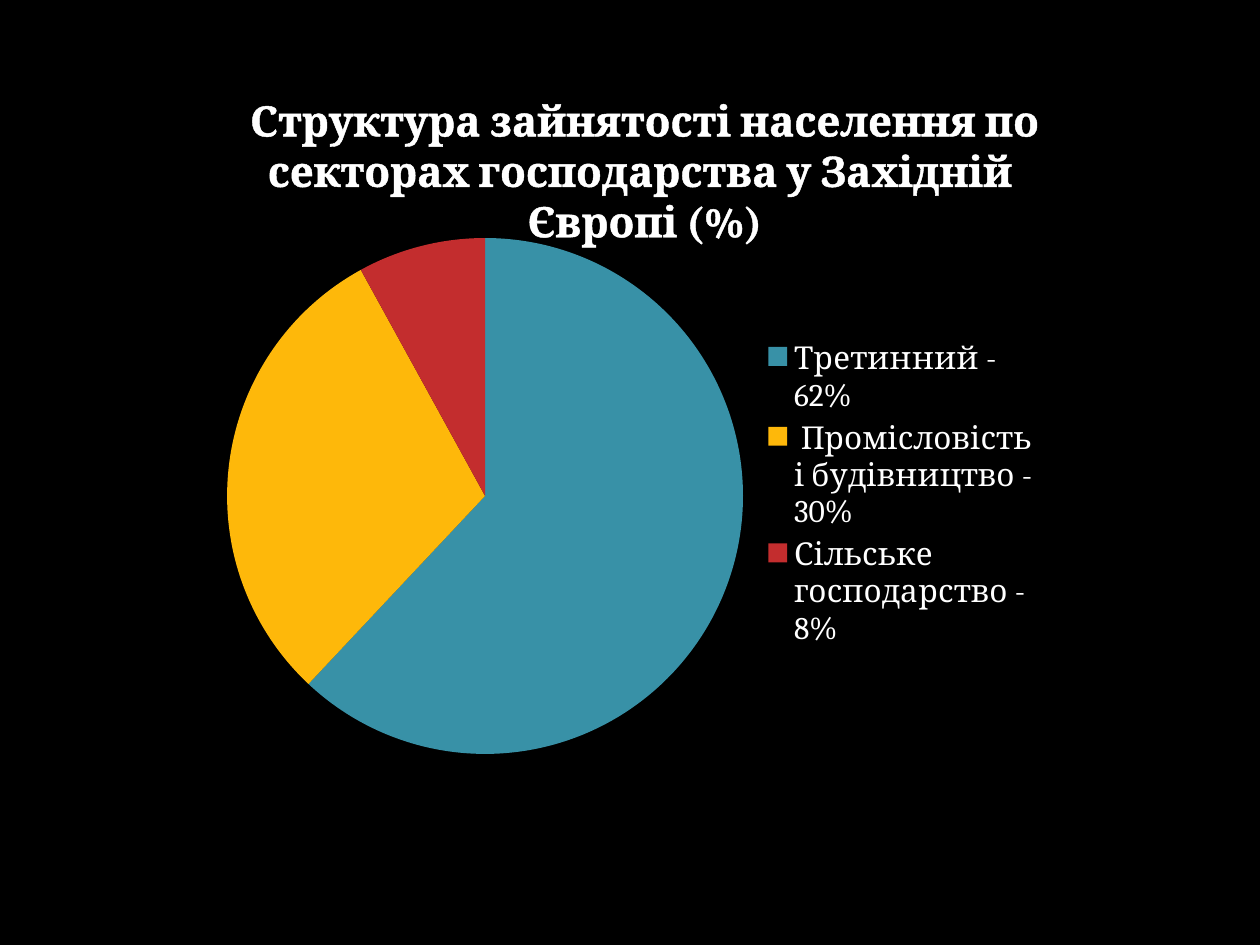
from dataclasses import dataclass

from lxml import etree
from pptx import Presentation
from pptx.chart import data as chart_data
from pptx.dml.color import RGBColor
from pptx.enum import chart as chart_enum
from pptx.enum import text
from pptx.oxml import ns, parse_xml
from pptx.util import Cm, Pt

TITLE = "Структура зайнятості населення по секторах господарства у Західній  Європі (%)"
SECTORS = [
    ("Третинний - 62%", 62, "3891A7"),
    (" Промісловість і будівництво - 30%", 30, "FEB80A"),
    ("Сільське господарство - 8%", 8, "C32D2E"),
]
TITLE_BOX = (Cm(3.76), Cm(1.78), Cm(18.47), Cm(2.31))
CHART_BOX = (Cm(4.29), Cm(4.32), Cm(16.94), Cm(11.28))
PLOT_LAYOUT = {"x": 0.017, "y": 0.038, "w": 0.614, "h": 0.931}


@dataclass(frozen=True)
class Theme:
    font: str = "Cambria"
    background: str = "000000"
    ink: str = "FFFFFF"
    title_size: float = 24
    legend_size: float = 18
    outline_width: float = 1.45


THEME = Theme()


def style_font(font, size):
    font.name = THEME.font
    font.size = Pt(size)
    font.color.rgb = RGBColor.from_string(THEME.ink)


def add_title(slide):
    frame = slide.shapes.add_textbox(*TITLE_BOX).text_frame
    frame.word_wrap = True
    frame.auto_size = text.MSO_AUTO_SIZE.SHAPE_TO_FIT_TEXT
    paragraph = frame.paragraphs[0]
    paragraph.alignment = text.PP_ALIGN.CENTER
    run = paragraph.add_run()
    run.text = TITLE
    style_font(run.font, THEME.title_size)
    run.font.bold = True
    outline = parse_xml(
        f'<a:ln {ns.nsdecls("a")} w="{int(Pt(THEME.outline_width))}">'
        f'<a:solidFill><a:srgbClr val="{THEME.ink}"/></a:solidFill></a:ln>'
    )
    run._r.get_or_add_rPr().insert(0, outline)


def set_plot_layout(chart):
    plot_area = chart._chartSpace.chart.plotArea
    for layout in plot_area.findall(ns.qn("c:layout")):
        plot_area.remove(layout)
    layout = etree.Element(ns.qn("c:layout"))
    manual = etree.SubElement(layout, ns.qn("c:manualLayout"))
    settings = {"layoutTarget": "inner", "xMode": "edge", "yMode": "edge", **PLOT_LAYOUT}
    for name, value in settings.items():
        etree.SubElement(manual, ns.qn(f"c:{name}")).set("val", str(value))
    plot_area.insert(0, layout)


def add_sector_chart(slide):
    data = chart_data.CategoryChartData()
    data.categories = [name for name, _, _ in SECTORS]
    data.add_series("Series 1", [share for _, share, _ in SECTORS])
    chart = slide.shapes.add_chart(chart_enum.XL_CHART_TYPE.PIE, *CHART_BOX, data).chart
    chart.has_title = False
    style_font(chart.font, THEME.legend_size)
    chart.has_legend = True
    chart.legend.position = chart_enum.XL_LEGEND_POSITION.RIGHT
    chart.legend.include_in_layout = False
    style_font(chart.legend.font, THEME.legend_size)
    plot = chart.plots[0]
    plot.vary_by_categories = True
    for index, (_, _, color) in enumerate(SECTORS):
        point_format = plot.series[0].points[index].format
        point_format.fill.solid()
        point_format.fill.fore_color.rgb = RGBColor.from_string(color)
        point_format.line.fill.background()
    set_plot_layout(chart)


def main():
    presentation = Presentation()
    presentation.slide_width = Cm(25.4)
    presentation.slide_height = Cm(19.05)
    slide = presentation.slides.add_slide(presentation.slide_layouts[6])
    slide.background.fill.solid()
    slide.background.fill.fore_color.rgb = RGBColor.from_string(THEME.background)
    add_title(slide)
    add_sector_chart(slide)
    presentation.save("out.pptx")


if __name__ == "__main__":
    main()
